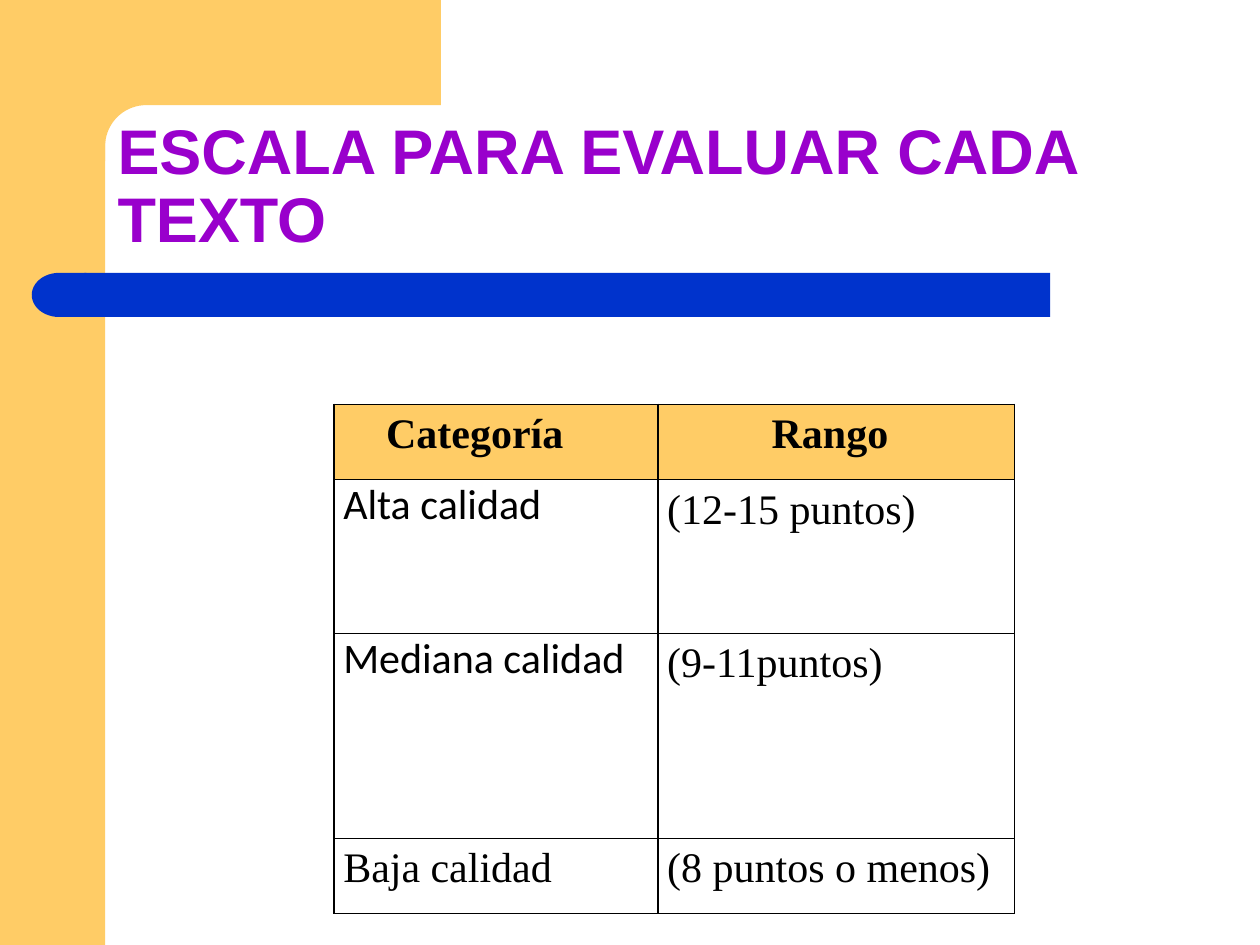
import math

import pptx
import pptx.dml.color
import pptx.enum.shapes
import pptx.enum.text
import pptx.oxml
import pptx.oxml.ns
import pptx.util

Cm = pptx.util.Cm
RGBColor = pptx.dml.color.RGBColor
SHAPE = pptx.enum.shapes.MSO_SHAPE
ALIGN = pptx.enum.text.PP_ALIGN
ANCHOR = pptx.enum.text.MSO_ANCHOR

AMBER = RGBColor(0xFF, 0xCC, 0x66)
BLUE = RGBColor(0x00, 0x33, 0xCC)
PURPLE = RGBColor(0x99, 0x00, 0xCC)
BLACK = RGBColor(0x00, 0x00, 0x00)

SERIF = "Times New Roman"
BAND_WIDTH = 2.12
COLUMN_WIDTHS = [6.53, 7.19]
ROW_HEIGHTS = [1.52, 3.1, 4.13, 1.52]
CATEGORIES = [
    ("Alta calidad", "(12-15 puntos)", "Calibri"),
    ("Mediana calidad", "(9-11puntos)", "Calibri"),
    ("Baja calidad", "(8 puntos o menos)", SERIF),
]


def write_text(frame, text, size=24, font=SERIF, color=BLACK, bold=False,
               align=ALIGN.LEFT, spacing=1.0):
    paragraph = frame.paragraphs[0]
    paragraph.alignment = align
    paragraph.line_spacing = spacing
    run = paragraph.add_run()
    run.text = text
    run.font.size = pptx.util.Pt(size)
    run.font.name = font
    run.font.bold = bold
    run.font.color.rgb = color


def paint(shape, color):
    shape.shadow.inherit = False
    shape.fill.solid()
    shape.fill.fore_color.rgb = color
    shape.line.fill.background()


def add_block(slide, kind, left, top, width, height, color):
    shape = slide.shapes.add_shape(kind, Cm(left), Cm(top), Cm(width), Cm(height))
    paint(shape, color)
    return shape


def add_corner(slide, left, right, bottom, inner_top, radius):
    """Top band whose inner corner is a quarter circle."""
    center_x, center_y = BAND_WIDTH + radius, inner_top + radius
    arc = []
    for degrees in range(270, 179, -5):
        angle = math.radians(degrees)
        arc.append((center_x + radius * math.cos(angle),
                    center_y + radius * math.sin(angle)))
    points = [(right, 0), (right, inner_top), *arc,
              (BAND_WIDTH, bottom), (left, bottom), (left, 0)]
    points = [(Cm(x), Cm(y)) for x, y in points]
    builder = slide.shapes.build_freeform(*points[0])
    builder.add_line_segments(points[1:], close=True)
    paint(builder.convert_to_shape(), AMBER)


def add_title(slide, text):
    box = slide.shapes.add_textbox(Cm(BAND_WIDTH), Cm(2.12), Cm(22.01), Cm(3.17))
    frame = box.text_frame
    frame.word_wrap = True
    frame.vertical_anchor = ANCHOR.BOTTOM
    write_text(frame, text, size=36, font="Arial", color=PURPLE, bold=True, spacing=0.9)


def add_borders(cell):
    properties = cell._tc.get_or_add_tcPr()
    for index, side in enumerate(("lnL", "lnR", "lnT", "lnB")):
        properties.insert(index, pptx.oxml.parse_xml(
            f'<a:{side} {pptx.oxml.ns.nsdecls("a")} w="12700"><a:solidFill>'
            f'<a:srgbClr val="{BLACK}"/></a:solidFill></a:{side}>'))


def fill_cell(cell, text, color=None, extra_right=0, **text_format):
    cell.margin_left = Cm(0.19)
    cell.margin_right = Cm(0.19 + extra_right)
    cell.margin_top = cell.margin_bottom = 0
    if color is None:
        cell.fill.background()
    else:
        cell.fill.solid()
        cell.fill.fore_color.rgb = color
    write_text(cell.text_frame, text, **text_format)
    add_borders(cell)


def add_scale_table(slide):
    frame = slide.shapes.add_table(
        len(ROW_HEIGHTS), len(COLUMN_WIDTHS), Cm(6.73), Cm(8.15),
        Cm(sum(COLUMN_WIDTHS)), Cm(sum(ROW_HEIGHTS)))
    table = frame.table
    table.horz_banding = False
    for column, width in zip(table.columns, COLUMN_WIDTHS):
        column.width = Cm(width)
    for row, height in zip(table.rows, ROW_HEIGHTS):
        row.height = Cm(height)

    # Header, set slightly left of centre
    for index, (text, shift) in enumerate([("Categoría", 0.85), ("Rango", 0.25)]):
        fill_cell(table.cell(0, index), text, color=AMBER, extra_right=shift,
                  bold=True, align=ALIGN.CENTER, spacing=1.15)

    # Categories and their score ranges
    for index, (category, score, font) in enumerate(CATEGORIES, start=1):
        fill_cell(table.cell(index, 0), category, font=font,
                  spacing=1.15 if font == SERIF else 1.0)
        fill_cell(table.cell(index, 1), score, spacing=1.15)


def main():
    presentation = pptx.Presentation()
    presentation.slide_width = Cm(25.4)
    presentation.slide_height = Cm(19.05)
    slide = presentation.slides.add_slide(presentation.slide_layouts[6])

    # Amber frame
    add_block(slide, SHAPE.RECTANGLE, 0, 0, BAND_WIDTH, 19.05, AMBER)
    add_corner(slide, left=1.27, right=8.89, bottom=3.25, inner_top=2.12, radius=0.83)

    # Blue bar with a rounded left end
    bar = add_block(slide, SHAPE.ROUNDED_RECTANGLE, 1.7, 5.5, 19.47, 0.89, BLUE)
    bar.adjustments[0] = 0
    bar_end = add_block(slide, SHAPE.FLOWCHART_DELAY, 0.64, 5.5, 1.1, 0.89, BLUE)
    bar_end.rotation = 180

    # Content
    add_title(slide, "ESCALA PARA EVALUAR CADA TEXTO")
    add_scale_table(slide)
    presentation.save("out.pptx")


if __name__ == "__main__":
    main()
